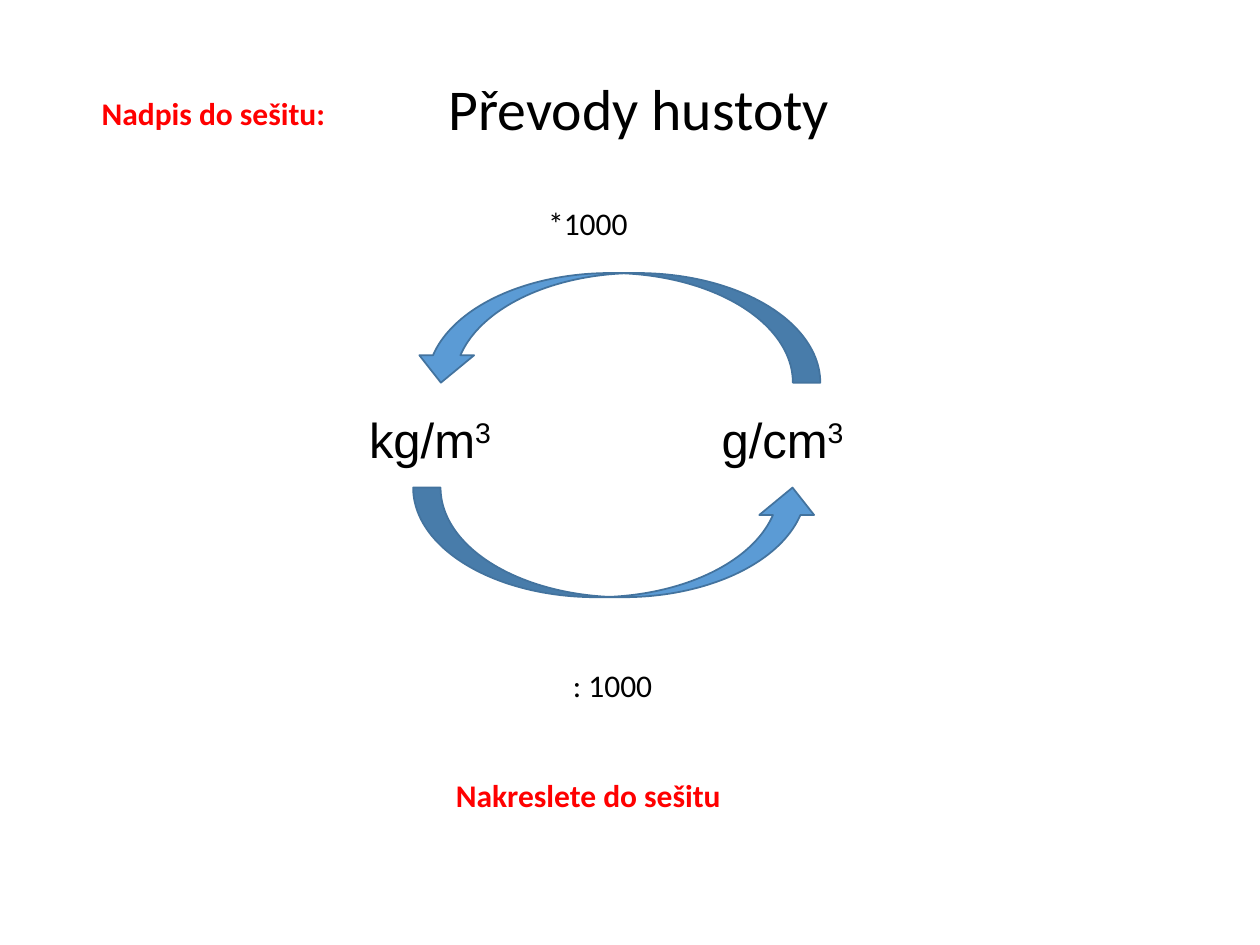
"""Build the slide on converting density units."""
from lxml.etree import SubElement
from pptx import Presentation
from pptx.dml.color import RGBColor
from pptx.enum.shapes import MSO_SHAPE as Shape
from pptx.enum.text import MSO_ANCHOR as Anchor, MSO_AUTO_SIZE as AutoSize, PP_ALIGN as Align
from pptx.oxml.ns import qn
from pptx.util import Cm, Pt

BLACK = RGBColor(0x00, 0x00, 0x00)
RED = RGBColor(0xFF, 0x00, 0x00)
BLUE = RGBColor(0x5B, 0x9B, 0xD5)
DARK_BLUE = RGBColor(0x43, 0x73, 0x9E)

TITLE_STYLE = {"size": Pt(33), "name": "Calibri", "bold": False}
UNIT_STYLE = {"size": Pt(28), "name": "Arial", "bold": False}
FACTOR_STYLE = {"size": Pt(18), "name": "Calibri", "bold": False}
TASK_STYLE = {"size": Pt(18), "name": "Calibri", "bold": True}

TITLE = "Převody hustoty"
TITLE_BOX = (8.79, 0.41, 21.89, 3.68)
UNITS = [("kg/m", False), ("3", True), ("\tg/cm", False), ("3", True)]
UNITS_BOX = (7.19, 8.13, 11.1, 1.45)
SECOND_UNIT_TAB = 7.11
LABELS = [
    ("*1000", (10.8, 3.99, 2.74, 1.02), FACTOR_STYLE, BLACK),
    (": 1000", (11.3, 13.31, 3.61, 1.02), FACTOR_STYLE, BLACK),
    ("Nadpis do sešitu:", (1.8, 1.78, 7.01, 1.02), TASK_STYLE, RED),
    ("Nakreslete do sešitu", (8.94, 15.52, 7.01, 1.02), TASK_STYLE, RED),
]
ARROWS = [
    (Shape.CURVED_UP_ARROW, (8.33, 9.83, 8.2, 2.21), 0),
    (Shape.CURVED_RIGHT_ARROW, (11.33, 2.51, 2.21, 8.2), 90),
]


def lengths(box):
    return [Cm(value) for value in box]


def add_run(paragraph, text, style, color):
    run = paragraph.add_run()
    run.text = text
    for attribute, value in style.items():
        setattr(run.font, attribute, value)
    run.font.color.rgb = color
    return run


def add_text_box(slide, box):
    frame = slide.shapes.add_textbox(*lengths(box)).text_frame
    frame.word_wrap = True
    frame.auto_size = AutoSize.SHAPE_TO_FIT_TEXT
    return frame.paragraphs[0]


def add_title(slide):
    title = slide.shapes.title
    title.left, title.top, title.width, title.height = lengths(TITLE_BOX)
    frame = title.text_frame
    frame.auto_size = AutoSize.NONE
    frame.vertical_anchor = Anchor.MIDDLE
    paragraph = frame.paragraphs[0]
    paragraph.alignment = Align.LEFT
    paragraph.line_spacing = 0.9
    add_run(paragraph, TITLE, TITLE_STYLE, BLACK)


def add_units(slide):
    paragraph = add_text_box(slide, UNITS_BOX)
    paragraph.alignment = Align.LEFT
    tabs = SubElement(paragraph._p.get_or_add_pPr(), qn("a:tabLst"))
    SubElement(tabs, qn("a:tab"), pos=str(Cm(SECOND_UNIT_TAB)), algn="l")
    for text, raised in UNITS:
        run = add_run(paragraph, text, UNIT_STYLE, BLACK)
        if raised:
            run._r.get_or_add_rPr().set("baseline", "30000")


def add_arrow(slide, kind, box, rotation):
    arrow = slide.shapes.add_shape(kind, *lengths(box))
    arrow.rotation = rotation
    arrow.shadow.inherit = False
    arrow.fill.solid()
    arrow.fill.fore_color.rgb = BLUE
    arrow.line.color.rgb = DARK_BLUE
    arrow.line.width = Pt(1)


def main():
    presentation = Presentation()
    presentation.slide_width, presentation.slide_height = Cm(25.4), Cm(19.05)
    slide = presentation.slides.add_slide(presentation.slide_layouts[5])
    add_title(slide)
    add_units(slide)
    for arrow in ARROWS:
        add_arrow(slide, *arrow)
    for text, box, style, color in LABELS:
        add_run(add_text_box(slide, box), text, style, color)
    presentation.save("out.pptx")


if __name__ == "__main__":
    main()
